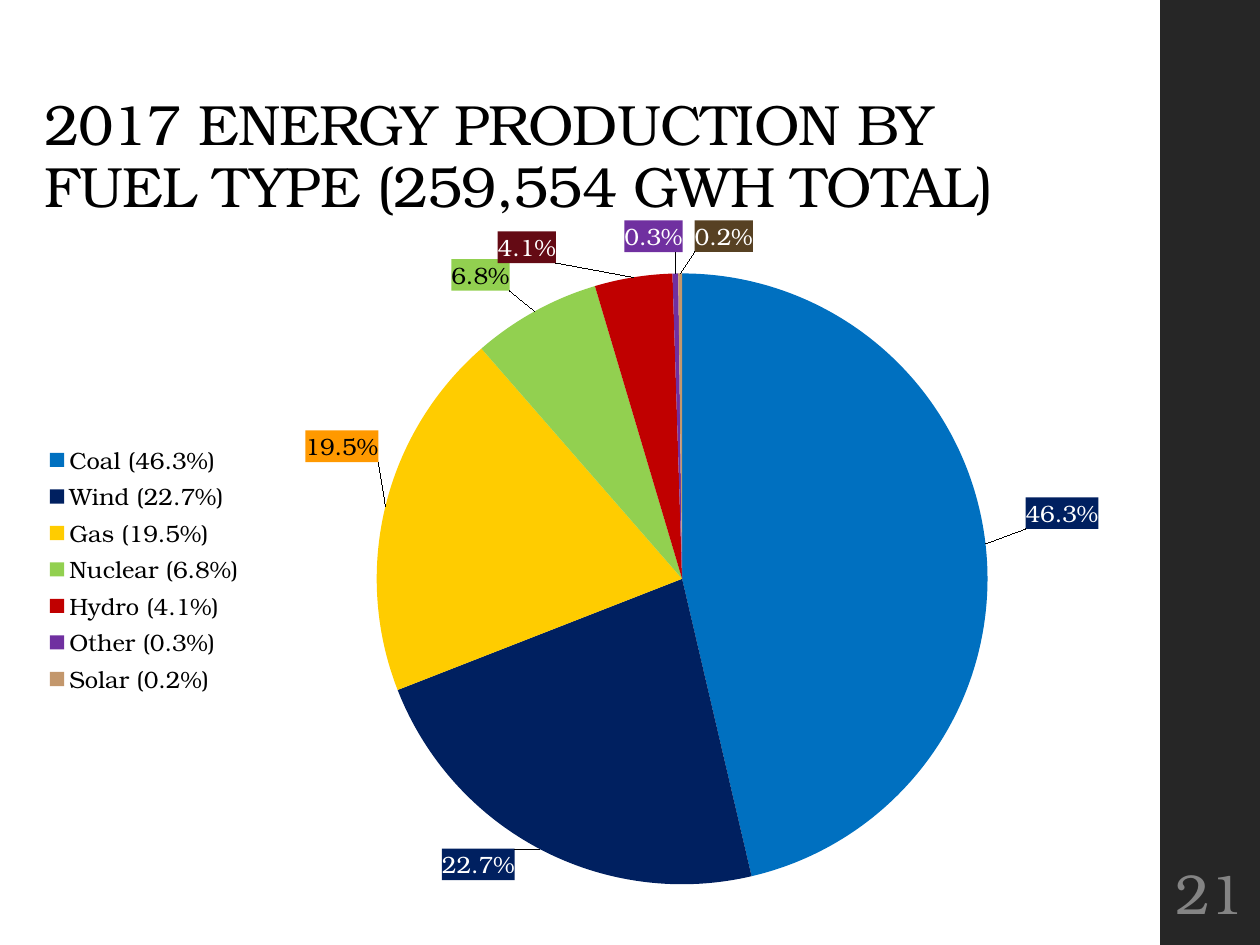
from dataclasses import dataclass

from pptx import Presentation
from pptx.chart.data import CategoryChartData
from pptx.dml.color import RGBColor
from pptx.enum.chart import XL_CHART_TYPE, XL_LABEL_POSITION, XL_LEGEND_POSITION
from pptx.enum.shapes import MSO_SHAPE
from pptx.enum.text import MSO_ANCHOR, PP_ALIGN
from pptx.oxml import parse_xml
from pptx.oxml.ns import nsdecls, qn
from pptx.util import Cm, Pt

FONT = "TeX Gyre Bonum"
BLACK = RGBColor(0x00, 0x00, 0x00)
WHITE = RGBColor(0xFF, 0xFF, 0xFF)
DARK = RGBColor(0x26, 0x26, 0x26)
GRAY = RGBColor(0x84, 0x84, 0x84)
BLUE = RGBColor(0x00, 0x70, 0xC0)
NAVY = RGBColor(0x00, 0x20, 0x60)
YELLOW = RGBColor(0xFF, 0xCC, 0x00)
ORANGE = RGBColor(0xFF, 0x99, 0x00)
GREEN = RGBColor(0x92, 0xD0, 0x50)
RED = RGBColor(0xC0, 0x00, 0x00)
MAROON = RGBColor(0x64, 0x0A, 0x14)
PURPLE = RGBColor(0x70, 0x30, 0xA0)
TAN = RGBColor(0xC3, 0x97, 0x6C)
BROWN = RGBColor(0x57, 0x41, 0x23)


@dataclass
class Fuel:
    name: str
    share: float
    color: RGBColor
    box: RGBColor
    ink: RGBColor
    dx: float
    dy: float


FUELS = [
    Fuel("Coal", 46.3, BLUE, NAVY, WHITE, 0.03, -0.02),
    Fuel("Wind", 22.7, NAVY, NAVY, WHITE, -0.02, -0.01),
    Fuel("Gas", 19.5, YELLOW, ORANGE, BLACK, 0, -0.06),
    Fuel("Nuclear", 6.8, GREEN, GREEN, BLACK, -0.02, -0.02),
    Fuel("Hydro", 4.1, RED, MAROON, WHITE, -0.07, -0.01),
    Fuel("Other", 0.3, PURPLE, PURPLE, WHITE, -0.02, -0.02),
    Fuel("Solar", 0.2, TAN, BROWN, WHITE, 0.04, -0.02),
]


def style(font, size: float, color: RGBColor) -> None:
    font.name = FONT
    font.size = Pt(size)
    font.bold = False
    font.color.rgb = color


def add_text(slide, text: str, *, left, top, width, height, size: float,
             color: RGBColor, align=PP_ALIGN.LEFT, anchor=MSO_ANCHOR.TOP,
             side=Cm(0.25), line: float = 1.0, space: int = 0) -> None:
    frame = slide.shapes.add_textbox(left, top, width, height).text_frame
    frame.word_wrap = True
    frame.vertical_anchor = anchor
    frame.margin_left = frame.margin_right = side
    para = frame.paragraphs[0]
    para.alignment = align
    para.line_spacing = line
    for i, part in enumerate(text.split("\n")):
        if i:
            para.add_line_break()
        run = para.add_run()
        run.text = part
        style(run.font, size, color)
        if space:
            run.font._element.set("spc", str(space))


def add_bar(slide) -> None:
    bar = slide.shapes.add_shape(
        MSO_SHAPE.RECTANGLE, Cm(23.39), Cm(0), Cm(2.01), Cm(19.05))
    bar.shadow.inherit = False
    bar.fill.solid()
    bar.fill.fore_color.rgb = DARK
    bar.line.fill.background()


def make_label(index: int, fuel: Fuel):
    return parse_xml(f"""
<c:dLbl {nsdecls("c", "a")}>
  <c:idx val="{index}"/>
  <c:layout><c:manualLayout>
    <c:x val="{fuel.dx}"/><c:y val="{fuel.dy}"/>
  </c:manualLayout></c:layout>
  <c:numFmt formatCode="0.0%" sourceLinked="0"/>
  <c:spPr><a:solidFill><a:srgbClr val="{fuel.box}"/></a:solidFill></c:spPr>
  <c:txPr><a:bodyPr/><a:p><a:pPr><a:defRPr sz="1350" b="0">
    <a:solidFill><a:srgbClr val="{fuel.ink}"/></a:solidFill>
    <a:latin typeface="{FONT}"/>
  </a:defRPr></a:pPr><a:endParaRPr lang="en-US"/></a:p></c:txPr>
  <c:dLblPos val="outEnd"/>
  <c:showLegendKey val="0"/><c:showVal val="0"/><c:showCatName val="0"/>
  <c:showSerName val="0"/><c:showPercent val="1"/><c:showBubbleSize val="0"/>
</c:dLbl>""")


def set_plot(chart) -> None:
    area = chart._chartSpace.chart.plotArea
    for old in area.findall(qn("c:layout")):
        area.remove(old)
    area.insert(0, parse_xml(f"""
<c:layout {nsdecls("c")}><c:manualLayout>
  <c:layoutTarget val="inner"/>
  <c:xMode val="edge"/><c:yMode val="edge"/>
  <c:x val="0.3165"/><c:y val="0.0804"/>
  <c:w val="0.5607"/><c:h val="0.866"/>
</c:manualLayout></c:layout>"""))


def add_pie(slide, fuels: list[Fuel]) -> None:
    data = CategoryChartData()
    data.categories = [f"{f.name} ({f.share}%)" for f in fuels]
    data.add_series("Series 1", [f.share for f in fuels])
    chart = slide.shapes.add_chart(
        XL_CHART_TYPE.PIE, Cm(0.64), Cm(4.37), Cm(21.97), Cm(14.22), data).chart
    chart.has_title = False
    style(chart.font, 13.5, BLACK)
    chart.has_legend = True
    chart.legend.position = XL_LEGEND_POSITION.LEFT
    chart.legend.include_in_layout = False
    style(chart.legend.font, 13.5, BLACK)
    set_plot(chart)

    plot = chart.plots[0]
    plot.vary_by_categories = True
    series = plot.series[0]
    labels = series.data_labels
    labels.show_value = False
    labels.show_percentage = True
    labels.number_format = "0.0%"
    labels.number_format_is_linked = False
    labels.position = XL_LABEL_POSITION.OUTSIDE_END
    style(labels.font, 13.5, BLACK)
    for i, fuel in enumerate(fuels):
        point = series.points[i].format
        point.fill.solid()
        point.fill.fore_color.rgb = fuel.color
        point.line.fill.background()
        labels._element.insert(i, make_label(i, fuel))


def main() -> None:
    deck = Presentation()
    deck.slide_width, deck.slide_height = Cm(25.4), Cm(19.05)
    slide = deck.slides.add_slide(deck.slide_layouts[6])
    add_bar(slide)
    add_text(slide, "2017 ENERGY PRODUCTION BY\nFUEL TYPE (259,554 GWH TOTAL)",
             left=Cm(0.64), top=Cm(1.83), width=Cm(24.7), height=Cm(1.98),
             size=32.4, color=BLACK, line=0.9, space=-50)
    add_pie(slide, FUELS)
    add_text(slide, "21", left=Cm(23.44), top=Cm(17.15), width=Cm(1.9),
             height=Cm(1.65), size=32, color=GRAY, align=PP_ALIGN.CENTER,
             anchor=MSO_ANCHOR.MIDDLE, side=Cm(0.08))
    deck.save("out.pptx")


if __name__ == "__main__":
    main()
